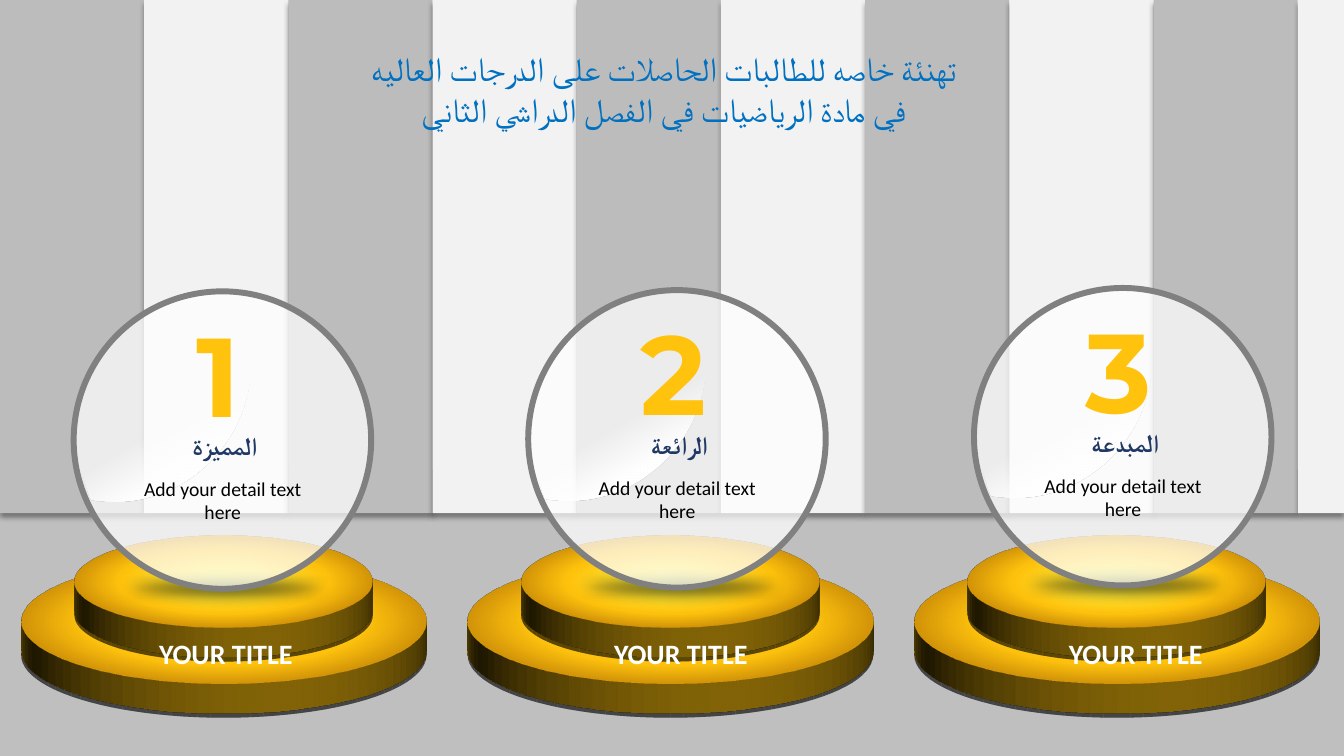
import math
from dataclasses import dataclass

from lxml import etree
from pptx import Presentation, util as u
from pptx.dml.color import RGBColor
from pptx.enum import shapes, text
from pptx.oxml import ns


@dataclass(frozen=True)
class Theme:
    floor: str = "BFBFBF"
    panels: tuple = ("BCBCBC", "F2F2F2")
    gold: str = "FFC30E"
    gold_light: str = "FFFF4F"
    gold_dark: str = "985702"
    white: str = "FFFFFF"
    black: str = "000000"
    rim: str = "808080"
    navy: str = "203864"
    heading: str = "0070C0"
    body_font: str = "Calibri"
    number_font: str = "Montserrat"
    number_size: int = 80
    heading_size: int = 24
    caption_size: int = 20
    name_size: int = 18
    detail_size: int = 14


@dataclass(frozen=True)
class Box:
    left: float
    top: float
    width: float
    height: float

    def inner(self, dx, dy, width, height):
        return Box(self.left + dx, self.top + dy, width, height)

    def emu(self):
        return [u.Pt(v) for v in (self.left, self.top, self.width, self.height)]


THEME = Theme()
OVAL = shapes.MSO_SHAPE.OVAL
RECTANGLE = shapes.MSO_SHAPE.RECTANGLE


def add_xml(parent, tag, **attributes):
    return etree.SubElement(parent, ns.qn(tag), {k: str(v) for k, v in attributes.items()})


def add_color(parent, color, opacity=100):
    color_node = add_xml(parent, "a:srgbClr", val=color)
    if opacity < 100:
        add_xml(color_node, "a:alpha", val=opacity * 1000)


def paint(shape, color=None, opacity=100):
    """Clear the default line and shadow, then fill with one colour or none."""
    shape.shadow.inherit = False
    shape.line.fill.background()
    if color is None:
        shape.fill.background()
        return
    shape.fill.solid()
    shape.fill.fore_color.rgb = RGBColor.from_string(color)
    if opacity < 100:
        solid = shape._element.spPr.find(ns.qn("a:solidFill"))
        add_xml(solid[0], "a:alpha", val=opacity * 1000)


def paint_gradient(shape, stops, angle=None):
    """Fill with (position, colour, opacity) stops, radial if no angle is given."""
    paint(shape)
    empty_fill = shape._element.spPr.find(ns.qn("a:noFill"))
    gradient = etree.Element(ns.qn("a:gradFill"), rotWithShape="1")
    stop_list = add_xml(gradient, "a:gsLst")
    for position, color, opacity in stops:
        add_color(add_xml(stop_list, "a:gs", pos=position * 1000), color, opacity)
    if angle is None:
        radial = add_xml(gradient, "a:path", path="circle")
        add_xml(radial, "a:fillToRect", l=50000, t=50000, r=50000, b=50000)
    else:
        add_xml(gradient, "a:lin", ang=angle * 60000, scaled=0)
    empty_fill.getparent().replace(empty_fill, gradient)


def effects(shape):
    return shape._element.spPr.find(ns.qn("a:effectLst"))


def drop_shadow(shape, blur):
    shadow = add_xml(effects(shape), "a:outerShdw", blurRad=u.Pt(blur), dist=u.Pt(3),
                     dir=90 * 60000, algn="t", rotWithShape=0)
    add_color(shadow, THEME.black, 40)


def lay_flat(shape, tilt, depth):
    """Tip the shape back by a number of degrees and give it a thickness."""
    scene = add_xml(shape._element.spPr, "a:scene3d")
    camera = add_xml(scene, "a:camera", prst="orthographicFront")
    add_xml(camera, "a:rot", lat=(360 - tilt) * 60000, lon=0, rev=0)
    add_xml(scene, "a:lightRig", rig="threePt", dir="t")
    solid = add_xml(shape._element.spPr, "a:sp3d", extrusionH=u.Pt(depth))
    add_color(add_xml(solid, "a:extrusionClr"), THEME.gold)


def add_text(slide, box, lines, size, color, font=THEME.body_font, bold=False, rtl=False):
    frame = slide.shapes.add_textbox(*box.emu()).text_frame
    frame.word_wrap = True
    frame.auto_size = text.MSO_AUTO_SIZE.SHAPE_TO_FIT_TEXT
    for index, line in enumerate(lines):
        paragraph = frame.add_paragraph() if index else frame.paragraphs[0]
        paragraph.alignment = text.PP_ALIGN.CENTER
        if rtl:
            paragraph._p.get_or_add_pPr().set("rtl", "1")
        run = paragraph.add_run()
        run.text = line
        run.font.name, run.font.size, run.font.bold = font, u.Pt(size), bold
        run.font.color.rgb = RGBColor.from_string(color)
        add_xml(run._r.get_or_add_rPr(), "a:cs", typeface=font)


def add_backdrop(slide, box):
    floor = slide.shapes.add_shape(RECTANGLE, *box.inner(0, 335.5, box.width, 204.5).emu())
    paint(floor, THEME.floor)
    panel_width, panel_height = 103, 366.5
    for index in range(math.ceil(box.width / panel_width)):
        left = index * panel_width
        width = min(panel_width, box.width - left)
        panel = slide.shapes.add_shape(RECTANGLE, *box.inner(left, 0, width, panel_height).emu())
        paint(panel, THEME.panels[index % 2])
        drop_shadow(panel, blur=4)


def add_podium(slide, box):
    for tier in (box, box.inner(38.2, 10, 213, 213)):
        disc = slide.shapes.add_shape(OVAL, *tier.emu())
        paint_gradient(disc, [(1, THEME.gold_light, 100), (49, THEME.gold, 100),
                              (99, THEME.gold_dark, 100)])
        drop_shadow(disc, blur=10)
        lay_flat(disc, tilt=72, depth=22.5)


def add_gloss(slide, box):
    """Draw the shine; the points from each listed index on form one curve."""
    outline = [(106, 0), (108.5, 0.5), (110.5, 3.5),
               (118, 17.5), (122.5, 33.5), (122.5, 50.5),
               (122.5, 105.5), (78.5, 150), (24.5, 150),
               (21, 150), (18, 149.5), (14.5, 149.5),
               (8.5, 148.5), (8, 148),
               (3, 135), (0, 121.5), (0, 106.5),
               (0, 48), (47.5, 0), (106, 0)]
    curve_starts = (3, 6, 9, 14, 17)
    start, *rest = [(u.Pt(box.left + x), u.Pt(box.top + y)) for x, y in outline]
    builder = slide.shapes.build_freeform(*start)
    builder.add_line_segments(rest)
    gloss = builder.convert_to_shape()
    segments = list(next(gloss._element.iter(ns.qn("a:path"))))
    for first in curve_starts:
        curve = etree.Element(ns.qn("a:cubicBezTo"))
        segments[first].addprevious(curve)
        for segment in segments[first:first + 3]:
            curve.append(segment[0])
            segment.getparent().remove(segment)
    paint_gradient(gloss, [(59, THEME.white, 0), (77, THEME.white, 100)], angle=60)


def add_orb(slide, box, number, name):
    glow = slide.shapes.add_shape(OVAL, *box.inner(6.5, 196.5, 205, 31).emu())
    paint(glow, THEME.black, 60)
    add_xml(effects(glow), "a:softEdge", rad=u.Pt(10))
    glass = slide.shapes.add_shape(OVAL, *box.emu())
    paint(glass, THEME.white, 72)
    glass.line.color.rgb = RGBColor.from_string(THEME.rim)
    glass.line.width = u.Pt(4.25)
    add_gloss(slide, box.inner(4, 0, 122.5, 150))
    add_text(slide, box.inner(31.7, 6.4, 144, 104.5), [number], THEME.number_size,
             THEME.gold, THEME.number_font, bold=True)
    add_text(slide, box.inner(5, 95.9, 206, 29), [name], THEME.name_size, THEME.navy, bold=True)
    add_text(slide, box.inner(41.5, 129, 130, 41), ["Add your detail text here"],
             THEME.detail_size, THEME.black)


def main():
    deck = Presentation()
    deck.slide_width, deck.slide_height = u.Pt(960), u.Pt(540)
    slide = deck.slides.add_slide(deck.slide_layouts[6])
    add_backdrop(slide, Box(0, 0, 960, 540))

    awards = [("1", "المميزة", 52.6, 208.1), ("2", "الرائعة", 377.3, 207.2),
              ("3", "المبدعة", 695.7, 205.7)]
    for index, (number, name, orb_left, orb_top) in enumerate(awards):
        add_podium(slide, Box(15.1 + 319 * index, 298.8, 289.5, 289.5))
        add_orb(slide, Box(orb_left, orb_top, 212.5, 212.5), number, name)
        add_text(slide, Box(34.6 + 325 * index, 451.3, 253.5, 52.5), ["YOUR TITLE"],
                 THEME.caption_size, THEME.white, bold=True)

    add_text(slide, Box(131.8, 31, 679, 65.5),
             ["تهنئة خاصه للطالبات الحاصلات على الدرجات العاليه ",
              "في مادة الرياضيات في الفصل الدراسي الثاني "],
             THEME.heading_size, THEME.heading, rtl=True)
    deck.save("out.pptx")


if __name__ == "__main__":
    main()
